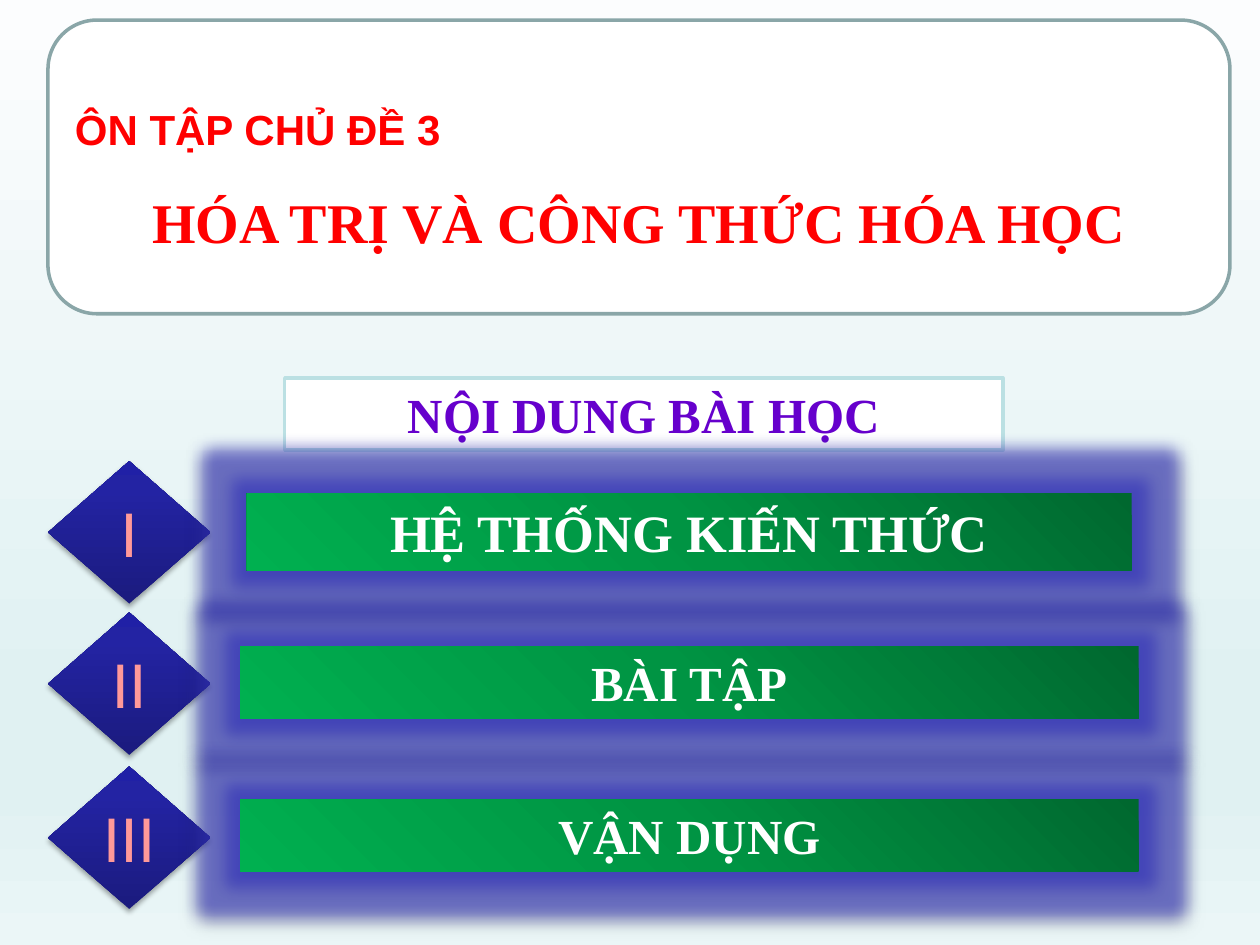
from dataclasses import dataclass

import lxml.etree
import pptx
import pptx.dml.color
import pptx.enum.shapes
import pptx.enum.text
import pptx.oxml
import pptx.oxml.ns
import pptx.util

Pt = pptx.util.Pt
ALIGN = pptx.enum.text.PP_ALIGN
ANCHOR = pptx.enum.text.MSO_ANCHOR
AUTO_SIZE = pptx.enum.text.MSO_AUTO_SIZE
SHAPE = pptx.enum.shapes.MSO_SHAPE
DRAWING = pptx.oxml.ns.nsdecls("a")

COLORS = {
    "white": "FFFFFF", "red": "FF0000", "purple": "6600CC", "pink": "FF9999",
    "card_edge": "8AA6A8", "heading_edge": "BBE0E3", "glow": "3333BB", "shadow": "000000",
}
SKY = [(0, "FCFDFE"), (74, "E0F1F2"), (83, "E0F1F2"), (100, "EBF6F7")]
NAVY = [(0, "1B1B7E"), (80, "2323A3"), (100, "2020A6")]
GREEN = [(0, "00682F"), (50, "009443"), (100, "00B050")]


@dataclass(frozen=True)
class Box:
    left: float
    top: float
    width: float
    height: float

    def lengths(self) -> tuple:
        return Pt(self.left), Pt(self.top), Pt(self.width), Pt(self.height)


@dataclass(frozen=True)
class Style:
    size: float
    font: str
    color: str
    bold: bool = True


@dataclass(frozen=True)
class Section:
    numeral: str
    label: str
    size: float
    diamond_top: float
    bar: Box


CARD = Box(27.4, 11.5, 675.4, 167.8)
HEADING = Box(162.7, 216, 410.4, 41.2)
SECTIONS = [
    Section("I", "HỆ THỐNG KIẾN THỨC", 30, 263.5, Box(141.1, 282, 505.6, 43.9)),
    Section("II", "BÀI TẬP", 28, 350, Box(137.3, 369.4, 513.4, 41.2)),
    Section("III", "VẬN DỤNG", 28, 438, Box(137.3, 456.6, 513.4, 41.2)),
]


def rgb(name: str) -> pptx.dml.color.RGBColor:
    return pptx.dml.color.RGBColor.from_string(COLORS[name])


def gradient(stops: list, angle: int):
    marks = "".join(
        f'<a:gs pos="{pos * 1000}"><a:srgbClr val="{color}"/></a:gs>' for pos, color in stops
    )
    return pptx.oxml.parse_xml(
        f'<a:gradFill {DRAWING} rotWithShape="1"><a:gsLst>{marks}</a:gsLst>'
        f'<a:lin ang="{angle * 60000}" scaled="0"/></a:gradFill>'
    )


def paint_background(slide) -> None:
    slide.background.fill.solid()
    solid = slide.background.fill._xPr.find(pptx.oxml.ns.qn("a:solidFill"))
    solid.getparent().replace(solid, gradient(SKY, 90))


def write(paragraph, text: str, style: Style, align=ALIGN.CENTER) -> None:
    paragraph.alignment = align
    run = paragraph.add_run()
    run.text = text
    run.font.size = Pt(style.size)
    run.font.name = style.font
    run.font.bold = style.bold
    run.font.color.rgb = rgb(style.color)


def add_panel(slide, kind, box: Box, edge: str):
    panel = slide.shapes.add_shape(kind, *box.lengths())
    panel.shadow.inherit = False
    panel.fill.solid()
    panel.fill.fore_color.rgb = rgb("white")
    panel.line.color.rgb = rgb(edge)
    panel.line.width = Pt(2)
    return panel


def add_gradient_shape(slide, kind, box: Box, stops: list, angle: int,
                       blur: float, distance: float, opacity: int, glow: float = 0):
    shape = slide.shapes.add_shape(kind, *box.lengths())
    shape.line.fill.background()
    shape.shadow.inherit = False
    properties = shape._element.spPr
    properties.find(pptx.oxml.ns.qn("a:ln")).addprevious(gradient(stops, angle))
    effects = properties.find(pptx.oxml.ns.qn("a:effectLst"))
    if glow:
        effects.append(pptx.oxml.parse_xml(
            f'<a:glow {DRAWING} rad="{Pt(glow)}"><a:srgbClr val="{COLORS["glow"]}">'
            '<a:alpha val="60000"/></a:srgbClr></a:glow>'
        ))
    effects.append(pptx.oxml.parse_xml(
        f'<a:outerShdw {DRAWING} blurRad="{Pt(blur)}" dist="{Pt(distance)}" dir="5400000" '
        f'rotWithShape="0"><a:srgbClr val="{COLORS["shadow"]}">'
        f'<a:alpha val="{opacity * 1000}"/></a:srgbClr></a:outerShdw>'
    ))
    return shape


def write_label(shape, text: str, style: Style, anchor=ANCHOR.TOP) -> None:
    frame = shape.text_frame
    frame.word_wrap = True
    frame.vertical_anchor = anchor
    if anchor == ANCHOR.TOP:
        frame.auto_size = AUTO_SIZE.SHAPE_TO_FIT_TEXT
    write(frame.paragraphs[0], text, style)


def add_title(slide) -> None:
    add_panel(slide, SHAPE.ROUNDED_RECTANGLE, CARD, "card_edge")
    title = slide.shapes.title
    slide.shapes._spTree.append(title._element)
    title.left, title.top, title.width, title.height = CARD.lengths()
    frame = title.text_frame
    frame.word_wrap = True
    frame.auto_size = AUTO_SIZE.NONE
    frame.vertical_anchor = ANCHOR.MIDDLE
    frame.margin_left = frame.margin_right = Pt(15.4)
    topic, subject = frame.paragraphs[0], frame.add_paragraph()
    write(topic, "ÔN TẬP CHỦ ĐỀ 3", Style(24, "Arial", "red"), ALIGN.LEFT)
    write(subject, "HÓA TRỊ VÀ CÔNG THỨC HÓA HỌC", Style(32, "Times New Roman", "red"))
    for paragraph in (topic, subject):
        paragraph.line_spacing = 1.5
        paragraph.space_before = Pt(0)


def add_section(slide, section: Section) -> None:
    diamond = add_gradient_shape(
        slide, SHAPE.DIAMOND, Box(27.4, section.diamond_top, 92.9, 81.4), NAVY, 270,
        blur=3.1, distance=1.8, opacity=35)
    write_label(diamond, section.numeral, Style(36, "Arial", "pink", False), ANCHOR.MIDDLE)
    bar = add_gradient_shape(
        slide, SHAPE.RECTANGLE, section.bar, GREEN, 135,
        blur=3.5, distance=2.2, opacity=32, glow=18)
    write_label(bar, section.label, Style(section.size, "Times New Roman", "white"))


def main() -> None:
    deck = pptx.Presentation()
    deck.slide_width, deck.slide_height = Pt(720), Pt(540)
    slide = deck.slides.add_slide(deck.slide_layouts.get_by_name("Title Only"))
    paint_background(slide)
    add_title(slide)
    heading = add_panel(slide, SHAPE.RECTANGLE, HEADING, "heading_edge")
    write_label(heading, "NỘI DUNG BÀI HỌC", Style(28, "Times New Roman", "purple"))
    for section in SECTIONS:
        add_section(slide, section)
    deck.save("out.pptx")


if __name__ == "__main__":
    main()
